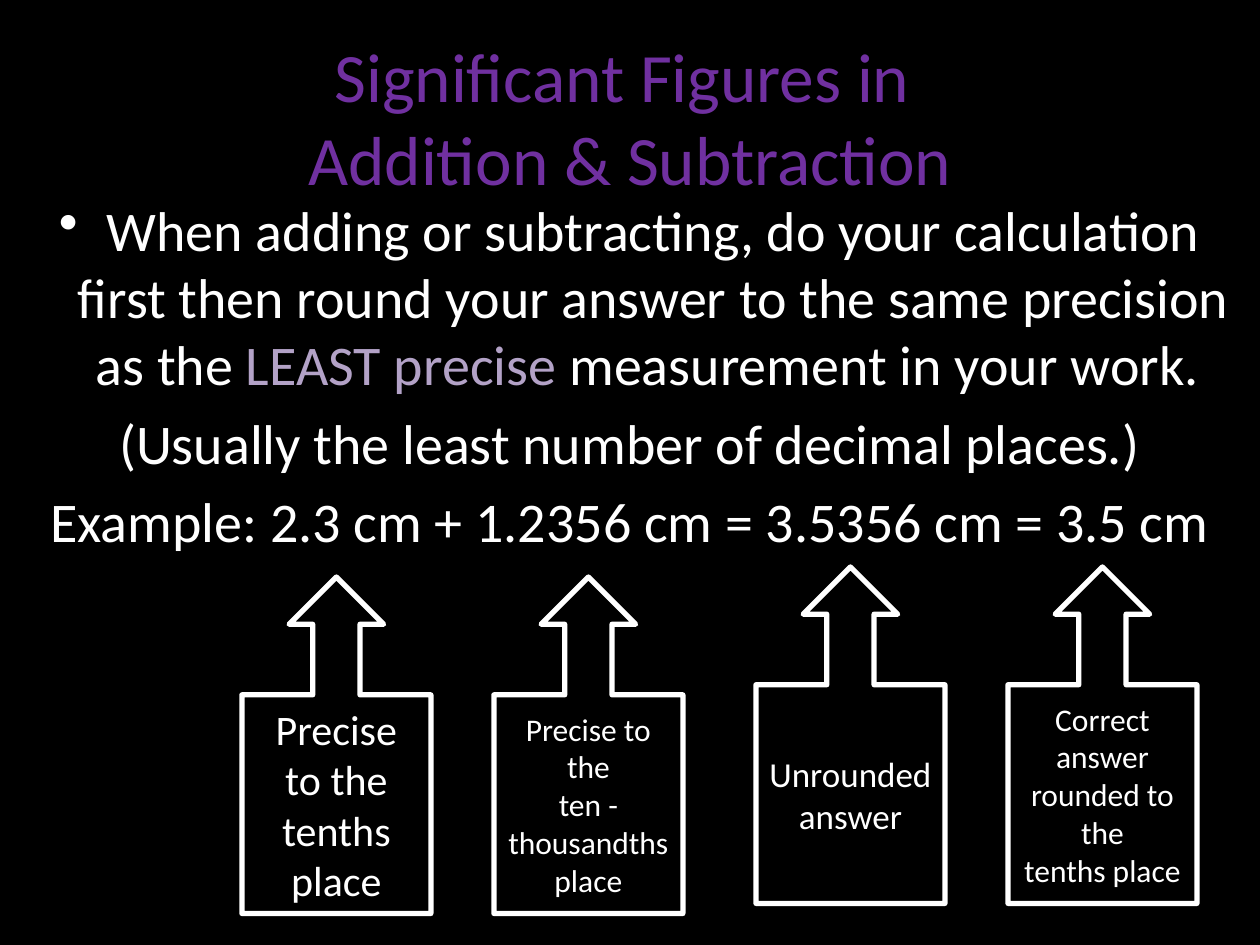
"""Build a slide on significant figures in addition and subtraction."""
from pptx import Presentation
from pptx.dml.color import RGBColor
from pptx.enum import shapes, text
from pptx.oxml.ns import qn
from pptx.util import Inches, Pt

BLACK = RGBColor(0, 0, 0)
WHITE = RGBColor(255, 255, 255)
PURPLE = RGBColor(0x70, 0x30, 0xA0)
LILAC = RGBColor(0xB3, 0xA2, 0xC7)

TITLE = "Significant Figures in \vAddition & Subtraction"
BODY = [
    [("When adding or subtracting, do your calculation first then round "
      "your answer to the same precision as the ", WHITE),
     ("LEAST precise ", LILAC),
     ("measurement in your work. ", WHITE)],
    [("(Usually the least number of decimal places.)", WHITE)],
    [("Example: 2.3 cm + 1.2356 cm = 3.5356 cm = 3.5 cm", WHITE)],
]
NOTES = [
    (1.92, 4.58, 24, ["Precise", "to the", "tenths", "place"]),
    (3.92, 4.58, 18, ["Precise to", "the", "ten -", "thousandths", "place"]),
    (6, 4.5, 20, ["Unrounded", "answer"]),
    (8, 4.5, 18, ["Correct", "answer", "rounded to the", "tenths place"]),
]


def style(para, size, color=None):
    para.alignment = text.PP_ALIGN.CENTER
    para.font.name = "Calibri"
    para.font.size = Pt(size)
    if color is not None:
        para.font.color.rgb = color


def add_box(slide, *area):
    frame = slide.shapes.add_textbox(*map(Inches, area)).text_frame
    frame.word_wrap = True
    return frame


def add_title(slide):
    frame = add_box(slide, 0.5, 0.3, 9, 1.25)
    frame.vertical_anchor = text.MSO_ANCHOR.MIDDLE
    para = frame.paragraphs[0]
    para.text = TITLE
    style(para, 39.6, PURPLE)


def add_body(slide):
    frame = add_box(slide, 0, 1.5, 10, 5.17)
    for i, parts in enumerate(BODY):
        para = frame.add_paragraph() if i else frame.paragraphs[0]
        style(para, 32)
        para.space_before = Pt(6.4)
        props = para._p.get_or_add_pPr()
        props.set("marL", str(Inches(0.38)))
        props.set("indent", str(Inches(-0.38)))
        if i == 0:
            mark = props.makeelement(qn("a:buChar"), {"char": "•"})
            props.insert_element_before(mark, "a:tabLst", "a:defRPr", "a:extLst")
        for words, color in parts:
            run = para.add_run()
            run.text = words
            run.font.color.rgb = color


def add_note(slide, left, top, size, lines):
    note = slide.shapes.add_shape(
        shapes.MSO_SHAPE.UP_ARROW_CALLOUT,
        *map(Inches, (left, top, 1.5, 2.67)))
    note.shadow.inherit = False
    note.fill.solid()
    note.fill.fore_color.rgb = BLACK
    note.line.color.rgb = WHITE
    note.line.width = Pt(3)
    frame = note.text_frame
    frame.word_wrap = True
    frame.vertical_anchor = text.MSO_ANCHOR.MIDDLE
    frame.text = "\n".join(lines)
    for para in frame.paragraphs:
        style(para, size, WHITE)


def main():
    deck = Presentation()
    deck.slide_width, deck.slide_height = Inches(10), Inches(7.5)
    slide = deck.slides.add_slide(deck.slide_layouts[6])
    slide.background.fill.solid()
    slide.background.fill.fore_color.rgb = BLACK
    add_title(slide)
    add_body(slide)
    for note in NOTES:
        add_note(slide, *note)
    deck.save("out.pptx")


if __name__ == "__main__":
    main()
